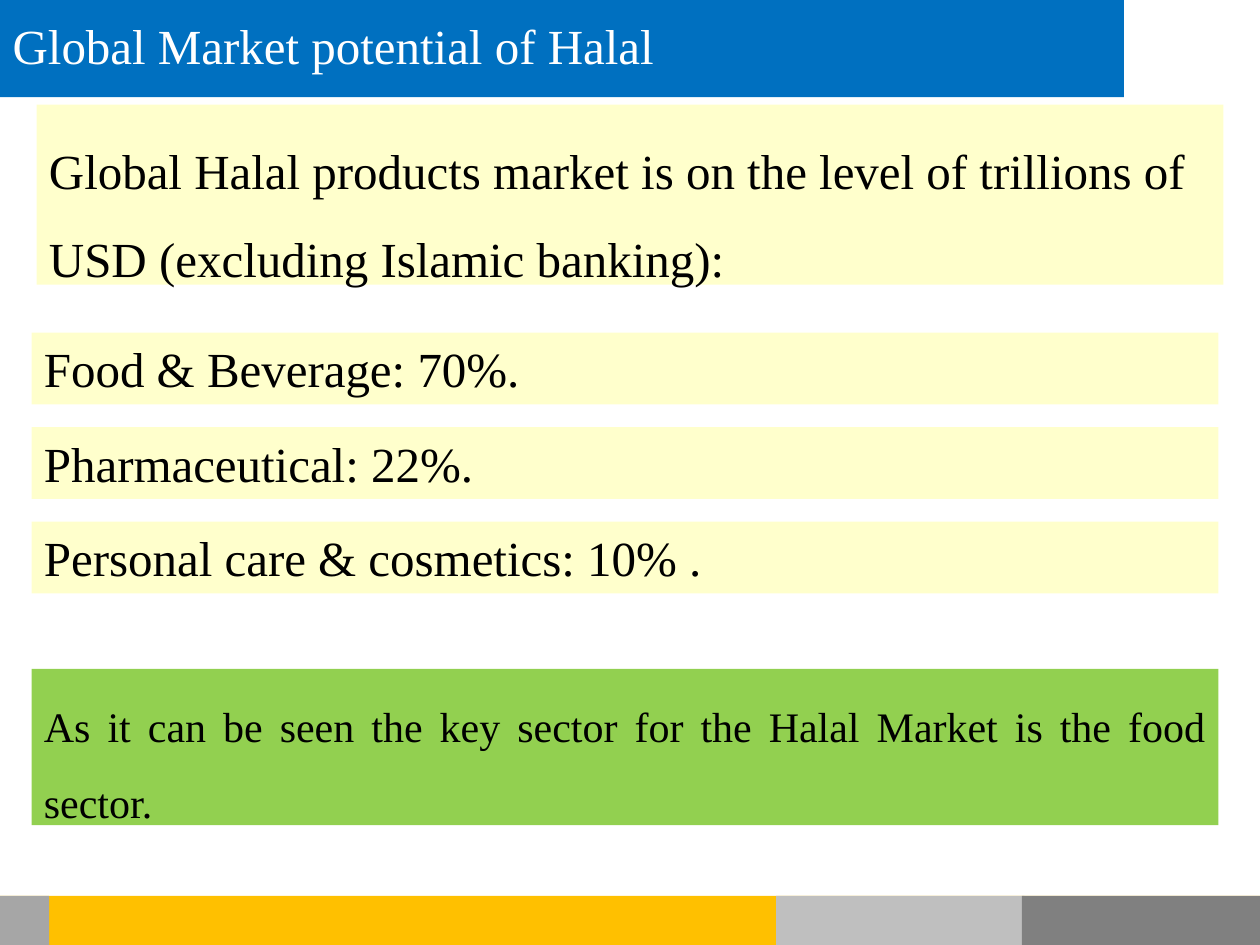
from dataclasses import dataclass

from pptx import Presentation
from pptx.dml.color import RGBColor
from pptx.enum.shapes import MSO_SHAPE
from pptx.enum.text import MSO_ANCHOR, MSO_AUTO_SIZE, PP_ALIGN
from pptx.util import Inches, Pt

RECT = MSO_SHAPE.RECTANGLE
TOP, MIDDLE = MSO_ANCHOR.TOP, MSO_ANCHOR.MIDDLE
GROW = MSO_AUTO_SIZE.SHAPE_TO_FIT_TEXT
LEFT, JUSTIFY = PP_ALIGN.LEFT, PP_ALIGN.JUSTIFY
TITLE_ONLY = 5


@dataclass(frozen=True)
class Theme:
    font: str = "Times New Roman"
    large: int = 28
    medium: int = 24
    text: str = "000000"
    title_text: str = "FFFFFF"
    title_fill: str = "0070C0"
    panel: str = "FFFFCC"
    conclusion: str = "92D050"
    footer: str = "FFC000"
    light_gray: str = "BFBFBF"
    dark_gray: str = "808080"
    mid_gray: str = "A6A6A6"


THEME = Theme()


def set_attrs(obj, values):
    for name, value in values.items():
        setattr(obj, name, value)


def place(sp, x, y, w, h):
    set_attrs(sp, {"left": Inches(x), "top": Inches(y),
                   "width": Inches(w), "height": Inches(h)})


def fill(sp, color):
    sp.fill.solid()
    sp.fill.fore_color.rgb = RGBColor.from_string(color)


def write(sp, text, color=THEME.text, size=THEME.large, anchor=TOP,
          align=LEFT, spacing=1.0):
    tf = sp.text_frame
    set_attrs(tf, {"word_wrap": True, "auto_size": GROW,
                   "vertical_anchor": anchor})
    p = tf.paragraphs[0]
    set_attrs(p, {"alignment": align, "line_spacing": spacing,
                  "space_before": Pt(0)})
    r = p.add_run()
    r.text = text
    set_attrs(r.font, {"name": THEME.font, "size": Pt(size)})
    r.font.color.rgb = RGBColor.from_string(color)


def add_title(s, x, y, w, h):
    sp = s.shapes.title
    place(sp, x, y, w, h)
    fill(sp, THEME.title_fill)
    write(sp, "Global Market potential of Halal", THEME.title_text,
          anchor=MIDDLE)


def add_panel(s, x, y, w, h, text, color=THEME.panel, **style):
    sp = s.shapes.add_textbox(Inches(x), Inches(y), Inches(w), Inches(h))
    fill(sp, color)
    write(sp, text, **style)


def add_sectors(s, x, y, w, h, pitch):
    sectors = ("Food & Beverage: 70%.", "Pharmaceutical: 22%.",
               "Personal care & cosmetics: 10% .")
    for i, text in enumerate(sectors):
        add_panel(s, x, y + i * pitch, w, h, text)


def add_footer(s, x, y, w, h):
    bands = ((0, w, THEME.footer), (6.16, 1.97, THEME.light_gray),
             (8.11, 1.97, THEME.dark_gray), (0, h, THEME.mid_gray))
    for dx, width, color in bands:
        sp = s.shapes.add_shape(RECT, Inches(x + dx), Inches(y),
                                Inches(width), Inches(h))
        sp.shadow.inherit = False
        fill(sp, color)
        sp.line.fill.background()


def main():
    prs = Presentation()
    set_attrs(prs, {"slide_width": Inches(10), "slide_height": Inches(7.5)})
    s = prs.slides.add_slide(prs.slide_layouts[TITLE_ONLY])
    add_title(s, 0, 0.07, 8.92, 0.57)
    add_panel(s, 0.29, 0.83, 9.42, 1.43,
              "Global Halal products market is on the level of trillions of "
              "USD (excluding Islamic banking):", spacing=1.5)
    add_sectors(s, 0.25, 2.64, 9.42, 0.57, pitch=0.75)
    add_panel(s, 0.25, 5.31, 9.42, 1.24,
              "As it can be seen the key sector for the Halal Market is the "
              "food sector.", THEME.conclusion, size=THEME.medium,
              align=JUSTIFY, spacing=1.5)
    add_footer(s, 0, 7.11, 10.04, 0.39)
    prs.save("out.pptx")


if __name__ == "__main__":
    main()
